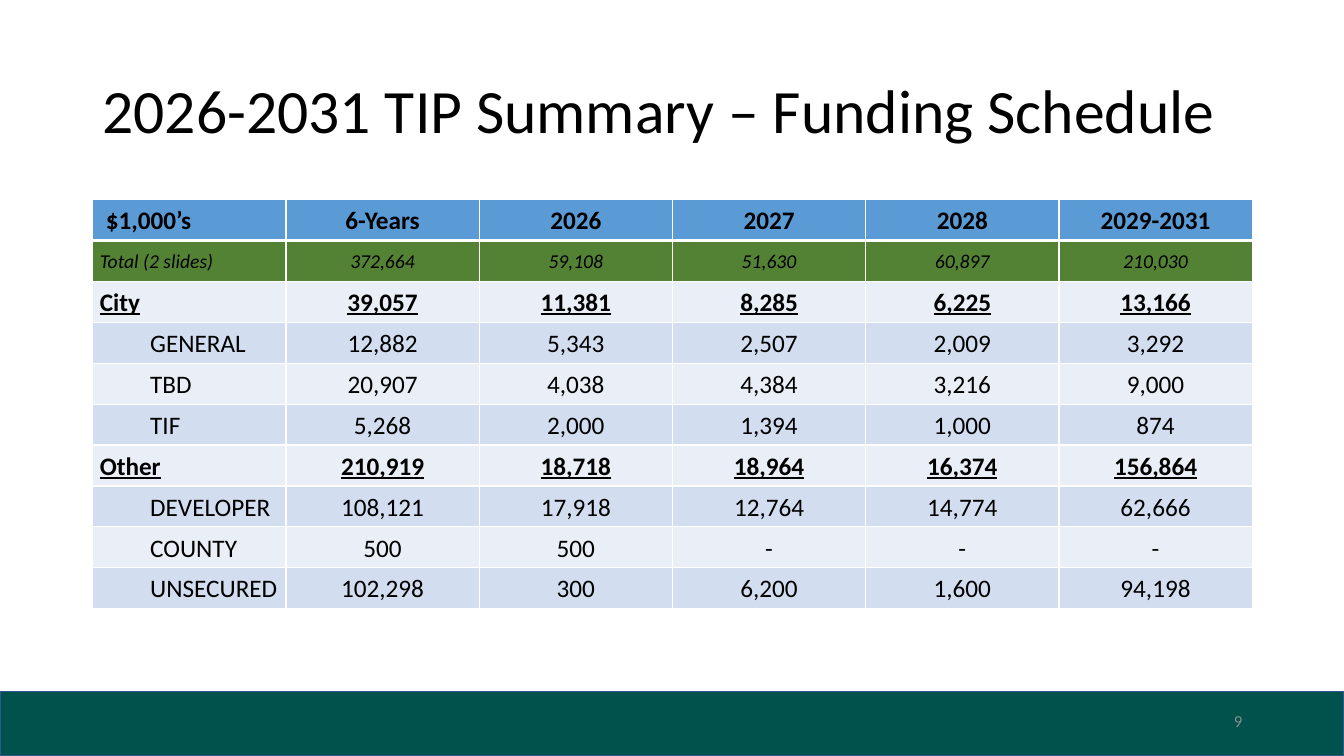
"""Build the 2026-2031 TIP funding schedule slide."""
import dataclasses

import lxml.etree
import pptx
import pptx.dml.color
import pptx.enum.shapes
import pptx.enum.text
import pptx.oxml.ns
import pptx.util

Inches = pptx.util.Inches
Pt = pptx.util.Pt
ALIGN = pptx.enum.text.PP_ALIGN
qn = pptx.oxml.ns.qn

TITLE = "2026-2031 TIP Summary – Funding Schedule"
PAGE = "9"
ROWS = [
    ("head", "$1,000’s", "6-Years", "2026", "2027", "2028", "2029-2031"),
    ("total", "Total (2 slides)", "372,664", "59,108", "51,630", "60,897", "210,030"),
    ("group", "City", "39,057", "11,381", "8,285", "6,225", "13,166"),
    ("item", "GENERAL", "12,882", "5,343", "2,507", "2,009", "3,292"),
    ("item", "TBD", "20,907", "4,038", "4,384", "3,216", "9,000"),
    ("item", "TIF", "5,268", "2,000", "1,394", "1,000", "874"),
    ("group", "Other", "210,919", "18,718", "18,964", "16,374", "156,864"),
    ("item", "DEVELOPER", "108,121", "17,918", "12,764", "14,774", "62,666"),
    ("item", "COUNTY", "500", "500", "-", "-", "-"),
    ("item", "UNSECURED", "102,298", "300", "6,200", "1,600", "94,198"),
]
INDENT = {"head": 0.06, "item": 0.5}


@dataclasses.dataclass(frozen=True)
class Theme:
    font: str = "Calibri"
    ink: str = "000000"
    white: str = "FFFFFF"
    band: str = "00524C"
    edge: str = "325491"
    page: str = "8C8C8C"
    head: str = "5B9BD5"
    total: str = "548235"
    stripes: tuple = ("EAEFF7", "D2DEEF")
    title_size: int = 44
    table_size: int = 18
    total_size: int = 14
    page_size: int = 12


THEME = Theme()


def paint(fill, color):
    fill.solid()
    fill.fore_color.rgb = pptx.dml.color.RGBColor.from_string(color)


def write(frame, text, size, color=THEME.ink, align=ALIGN.LEFT, space=1.0):
    frame.text = text
    line = frame.paragraphs[0]
    line.alignment = align
    line.line_spacing = space
    font = line.runs[0].font
    font.name = THEME.font
    font.size = Pt(size)
    font.color.rgb = pptx.dml.color.RGBColor.from_string(color)
    return line


def add_text(slide, box, *style):
    frame = slide.shapes.add_textbox(*map(Inches, box)).text_frame
    frame.word_wrap = True
    frame.vertical_anchor = pptx.enum.text.MSO_ANCHOR.MIDDLE
    write(frame, *style)


def add_edges(cell, row):
    widths = {"L": 1, "R": 1, "T": 3 if row == 1 else 1, "B": 3 if row == 0 else 1}
    props = cell._tc.get_or_add_tcPr()
    for side, width in widths.items():
        line = lxml.etree.SubElement(props, qn(f"a:ln{side}"), w=str(Pt(width)))
        solid = lxml.etree.SubElement(line, qn("a:solidFill"))
        lxml.etree.SubElement(solid, qn("a:srgbClr"), val=THEME.white)


def fill_cell(cell, kind, text, row, col):
    cell.margin_left = cell.margin_right = Inches(0.07)
    cell.margin_top = cell.margin_bottom = 0
    cell.vertical_anchor = pptx.enum.text.MSO_ANCHOR.MIDDLE
    add_edges(cell, row)
    fills = {"head": THEME.head, "total": THEME.total}
    paint(cell.fill, fills.get(kind, THEME.stripes[row % 2]))
    size = THEME.total_size if kind == "total" else THEME.table_size
    align = ALIGN.CENTER if col else ALIGN.LEFT
    line = write(cell.text_frame, text, size, THEME.ink, align, 1.07)
    font = line.runs[0].font
    font.bold = kind in ("head", "group")
    font.italic = kind == "total"
    font.underline = kind == "group"
    if col == 0 and kind in INDENT:
        line.level = int(kind == "item")
        props = line._p.get_or_add_pPr()
        props.set("marL", str(Inches(INDENT[kind])))
        props.set("indent", "0")


def add_grid(slide):
    count, width = len(ROWS), len(ROWS[0]) - 1
    box = map(Inches, (0.92, 1.98, 11.5, 4.06))
    table = slide.shapes.add_table(count, width, *box).table
    for row, (kind, *texts) in enumerate(ROWS):
        for col, text in enumerate(texts):
            fill_cell(table.cell(row, col), kind, text, row, col)


def main():
    deck = pptx.Presentation()
    deck.slide_width, deck.slide_height = Inches(13.33), Inches(7.5)
    slide = deck.slides.add_slide(deck.slide_layouts[6])
    band = slide.shapes.add_shape(
        pptx.enum.shapes.MSO_SHAPE.RECTANGLE, *map(Inches, (0, 6.86, 13.33, 0.64)))
    band.shadow.inherit = False
    paint(band.fill, THEME.band)
    paint(band.line.fill, THEME.edge)
    band.line.width = Pt(1)
    add_text(slide, (0.92, 0.4, 11.5, 1.45), TITLE, THEME.title_size,
             THEME.ink, ALIGN.LEFT, 0.9)
    add_grid(slide)
    add_text(slide, (10.42, 6.95, 2, 0.4), PAGE, THEME.page_size,
             THEME.page, ALIGN.RIGHT)
    deck.save("out.pptx")


if __name__ == "__main__":
    main()
